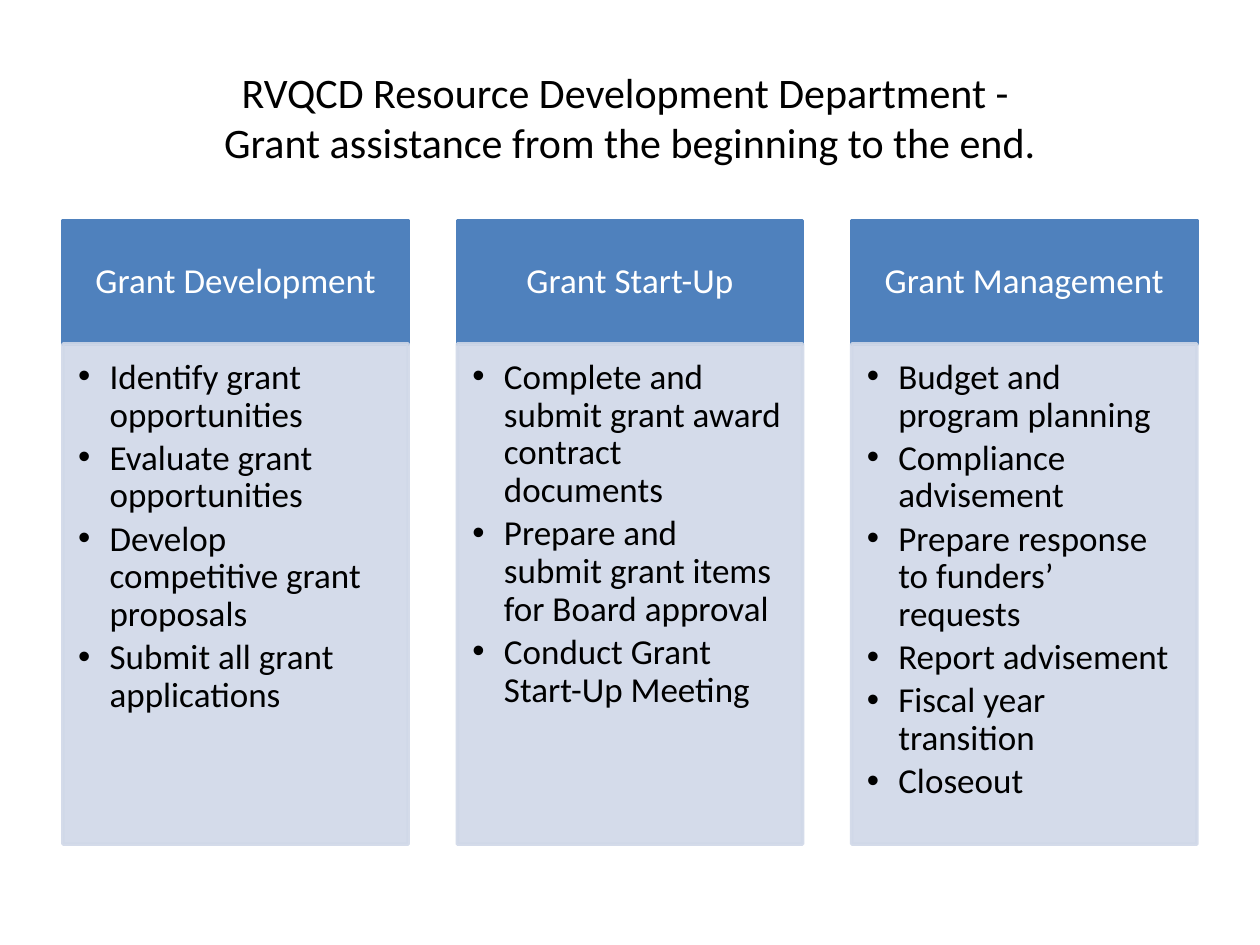
from dataclasses import dataclass

from lxml.etree import SubElement
from pptx import Presentation
from pptx.dml.color import RGBColor
from pptx.enum.shapes import MSO_SHAPE
from pptx.enum.text import MSO_ANCHOR, PP_ALIGN
from pptx.oxml.ns import qn
from pptx.util import Inches, Pt


@dataclass(frozen=True)
class Theme:
    font: str = "Calibri"
    title_size: int = 24
    body_size: int = 20
    black: str = "000000"
    white: str = "FFFFFF"
    header: str = "4F81BD"
    panel: str = "D0D8E8"
    panel_opacity: int = 90


@dataclass(frozen=True)
class Column:
    heading: str
    items: tuple[str, ...]


THEME = Theme()

# Column grid, in inches
LEFT, PITCH, WIDTH = 0.5, 3.13, 2.74
TOP, HEADER_H, PANEL_H = 1.75, 0.98, 3.97

TITLE = (
    "RVQCD Resource Development Department - \v"
    "Grant assistance from the beginning to the end."
)
COLUMNS = (
    Column("Grant Development", (
        "Identify grant opportunities",
        "Evaluate grant opportunities",
        "Develop competitive grant proposals",
        "Submit all grant applications",
    )),
    Column("Grant Start-Up", (
        "Complete and submit grant award contract documents",
        "Prepare and submit grant items for Board approval",
        "Conduct Grant Start-Up Meeting",
    )),
    Column("Grant Management", (
        "Budget and program planning",
        "Compliance advisement",
        "Prepare response to funders’ requests",
        "Report advisement",
        "Fiscal year transition",
        "Closeout",
    )),
)


def set_opacity(color_format, percent: int) -> None:
    """Add an alpha value to a solid fill."""
    for color in color_format.iter(qn("a:srgbClr")):
        SubElement(color, qn("a:alpha")).set("val", str(percent * 1000))


def add_bullet(p) -> None:
    """Give a paragraph a round bullet with a hanging indent."""
    p.level = 1
    pPr = p._p.get_or_add_pPr()
    pPr.set("marL", str(Inches(0.25)))
    pPr.set("indent", str(-Inches(0.25)))
    SubElement(pPr, qn("a:buFont")).set("typeface", "Arial")
    SubElement(pPr, qn("a:buChar")).set("char", "•")


def write_text(sp, *lines: str, size: int = THEME.body_size,
               color: str = THEME.black, align=PP_ALIGN.LEFT,
               anchor=MSO_ANCHOR.TOP, insets=(0.1, 0.05, 0.1, 0.05),
               spacing: float = 1.0, after: float = 0,
               bullets: bool = False) -> None:
    """Write one paragraph per line, all in the same format."""
    tf = sp.text_frame
    tf.word_wrap = True
    tf.vertical_anchor = anchor
    (tf.margin_left, tf.margin_top,
     tf.margin_right, tf.margin_bottom) = map(Inches, insets)
    for i, line in enumerate(lines):
        p = tf.add_paragraph() if i else tf.paragraphs[0]
        p.text = line
        p.alignment = align
        p.line_spacing = spacing
        p.space_after = Pt(after)
        if bullets:
            add_bullet(p)
        for r in p.runs:
            r.font.name = THEME.font
            r.font.size = Pt(size)
            r.font.color.rgb = RGBColor.from_string(color)


def add_box(s, x: float, y: float, h: float, color: str, opacity: int = 100):
    """Draw a rectangle of column width with a matching outline."""
    sp = s.shapes.add_shape(MSO_SHAPE.RECTANGLE, Inches(x), Inches(y),
                            Inches(WIDTH), Inches(h))
    sp.shadow.inherit = False
    sp.fill.solid()
    sp.fill.fore_color.rgb = RGBColor.from_string(color)
    sp.line.color.rgb = RGBColor.from_string(color)
    sp.line.width = Pt(2)
    if opacity < 100:
        set_opacity(sp._element.spPr, opacity)
    return sp


def add_column(s, x: float, column: Column) -> None:
    """Draw a heading box above its bulleted panel."""
    header = add_box(s, x, TOP, HEADER_H, THEME.header)
    write_text(header, column.heading, color=THEME.white,
               align=PP_ALIGN.CENTER, anchor=MSO_ANCHOR.MIDDLE,
               insets=(0.16, 0.09, 0.16, 0.09), spacing=0.9)
    panel = add_box(s, x, TOP + HEADER_H, PANEL_H, THEME.panel,
                    THEME.panel_opacity)
    write_text(panel, *column.items, insets=(0.12, 0.12, 0.16, 0.17),
               spacing=0.9, after=3, bullets=True)


def main() -> None:
    prs = Presentation()
    prs.slide_width, prs.slide_height = Inches(10), Inches(7.5)
    s = prs.slides.add_slide(prs.slide_layouts[6])

    # Title
    title = s.shapes.add_textbox(Inches(0.5), Inches(0.3),
                                 Inches(9), Inches(1.25))
    write_text(title, TITLE, size=THEME.title_size,
               align=PP_ALIGN.CENTER, anchor=MSO_ANCHOR.MIDDLE)

    # Three stages of grant assistance
    for i, column in enumerate(COLUMNS):
        add_column(s, LEFT + i * PITCH, column)

    prs.save("out.pptx")


if __name__ == "__main__":
    main()
